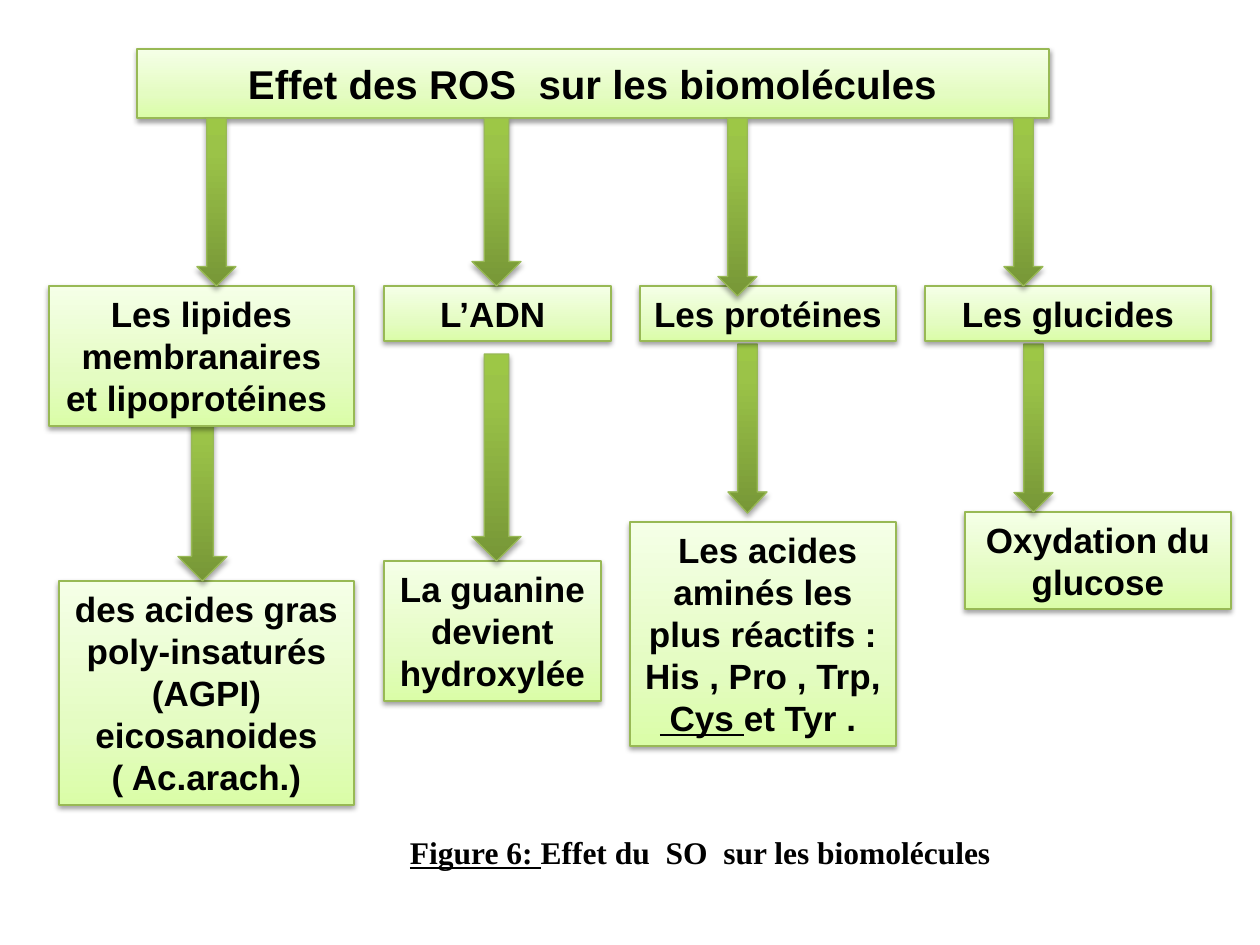
from lxml import etree
from pptx import Presentation
from pptx import util as u
from pptx.dml.color import RGBColor
from pptx.enum import shapes, text
from pptx.oxml import ns

SCALE = 914400 / 126
BLACK = RGBColor(0x00, 0x00, 0x00)
OUTLINE = RGBColor(0x98, 0xB9, 0x55)
BOX_STOPS = [
    (0, RGBColor(0xDA, 0xFD, 0xA7)),
    (35, RGBColor(0xE4, 0xFC, 0xC2)),
    (100, RGBColor(0xF5, 0xFF, 0xE7)),
]
ARROW_STOPS = [
    (0, RGBColor(0x77, 0x97, 0x37)),
    (80, RGBColor(0x9B, 0xC3, 0x48)),
    (100, RGBColor(0x9D, 0xC7, 0x46)),
]

TITLE = "Effet des ROS  sur les biomolécules"
SUBJECTS = [
    ((49, 286, 305, 140), [("Les lipides membranaires et lipoprotéines ", False)]),
    ((384, 286, 227, 55), [("L’ADN ", False)]),
    ((640, 286, 256, 55), [("Les protéines", False)]),
    ((925, 286, 286, 55), [("Les glucides", False)]),
]
DETAILS = [
    ((59, 581, 295, 224),
     [("des acides gras poly-insaturés (AGPI) eicosanoides\n( Ac.arach.)", False)]),
    ((384, 561, 217, 140), [("La guanine devient hydroxylée", False)]),
    ((630, 522, 266, 224),
     [(" Les acides aminés les plus réactifs : His , Pro , Trp, ", False),
      (" Cys ", True), ("et Tyr . ", False)]),
    ((965, 512, 266, 97), [("Oxydation du glucose", False)]),
]
UPPER_ARROWS = [
    ((197, 118, 39, 168), 0.5, 0.5),
    ((472, 118, 49, 168), 0.5, 0.5),
    ((718, 118, 39, 178), 0.5, 0.5),
    ((1004, 118, 39, 168), 0.5, 0.5),
]
LOWER_ARROWS = [
    ((178, 403, 49, 178), 0.44, 0.5),
    ((472, 354, 49, 207), 0.5, 0.5),
    ((728, 344, 39, 169), 0.5, 0.54),
    ((1014, 344, 39, 168), 0.5, 0.5),
]


def px(*lengths):
    """Turn pixel lengths into EMU."""
    return [round(length * SCALE) for length in lengths]


def add_element(parent, tag, **attributes):
    """Append a DrawingML element and return it."""
    element = etree.SubElement(parent, ns.qn(tag))
    for name, value in attributes.items():
        element.set(name, str(value))
    return element


def write_text(frame, runs, size=20, font="Arial", align=text.PP_ALIGN.CENTER,
               anchor=text.MSO_ANCHOR.TOP):
    """Write bold (text, underlined) runs as one wrapped paragraph."""
    frame.word_wrap = True
    frame.vertical_anchor = anchor
    paragraph = frame.paragraphs[0]
    paragraph.alignment = align
    for words, underlined in runs:
        for index, line in enumerate(words.split("\n")):
            if index:
                paragraph.add_line_break()
            run = paragraph.add_run()
            run.text = line
            run.font.size = u.Pt(size)
            run.font.name = font
            run.font.bold = True
            run.font.underline = underlined
            run.font.color.rgb = BLACK


def apply_gradient(shape, stops):
    """Fill a shape with a gradient that rises from bottom to top."""
    shape.fill.gradient()
    shape.fill.gradient_angle = 90
    stop_list = shape._element.spPr.find(".//" + ns.qn("a:gsLst"))
    for stop in list(stop_list):
        stop_list.remove(stop)
    for position, color in stops:
        stop = add_element(stop_list, "a:gs", pos=position * 1000)
        add_element(stop, "a:srgbClr", val=color)


def apply_shadow(shape, opacity, distance):
    """Give a shape a soft black shadow below it."""
    shape.shadow.inherit = False
    effects = shape._element.spPr.find(ns.qn("a:effectLst"))
    shadow = add_element(effects, "a:outerShdw", blurRad=u.Pt(3.1),
                         dist=u.Pt(distance), dir=90 * 60000, rotWithShape=0)
    color = add_element(shadow, "a:srgbClr", val=BLACK)
    add_element(color, "a:alpha", val=opacity * 1000)


def add_styled_shape(slide, kind, bounds, stops, opacity, distance):
    """Add a green outlined gradient shape with a shadow."""
    shape = slide.shapes.add_shape(kind, *px(*bounds))
    apply_gradient(shape, stops)
    shape.line.color.rgb = OUTLINE
    shape.line.width = u.Pt(0.75)
    apply_shadow(shape, opacity, distance)
    return shape


def add_box(slide, bounds, runs, **text_format):
    """Add a pale green box with text."""
    box = add_styled_shape(slide, shapes.MSO_SHAPE.RECTANGLE, bounds, BOX_STOPS, 38, 1.6)
    write_text(box.text_frame, runs, **text_format)


def add_arrow(slide, bounds, shaft, head):
    """Add a green down arrow with given proportions."""
    arrow = add_styled_shape(slide, shapes.MSO_SHAPE.DOWN_ARROW, bounds, ARROW_STOPS, 35, 1.8)
    arrow.adjustments[0] = shaft
    arrow.adjustments[1] = head


def add_caption(slide):
    """Add the figure caption."""
    caption = slide.shapes.add_textbox(*px(178, 827, 867, 89))
    caption.text_frame.margin_left = px(232)[0]
    write_text(caption.text_frame,
               [("Figure 6: ", True), ("Effet du  SO  sur les biomolécules", False)],
               size=18, font="Times New Roman", align=text.PP_ALIGN.LEFT)


def main():
    """Build and save the slide."""
    presentation = Presentation()
    presentation.slide_width, presentation.slide_height = px(1260, 945)
    slide = presentation.slides.add_slide(presentation.slide_layouts[6])
    add_box(slide, (137, 49, 912, 69), [(TITLE, False)], size=23,
            anchor=text.MSO_ANCHOR.MIDDLE)
    for boxes, arrows in ((DETAILS, LOWER_ARROWS), (SUBJECTS, UPPER_ARROWS)):
        for bounds, runs in boxes:
            add_box(slide, bounds, runs)
        for bounds, shaft, head in arrows:
            add_arrow(slide, bounds, shaft, head)
    add_caption(slide)
    presentation.save("out.pptx")


if __name__ == "__main__":
    main()
